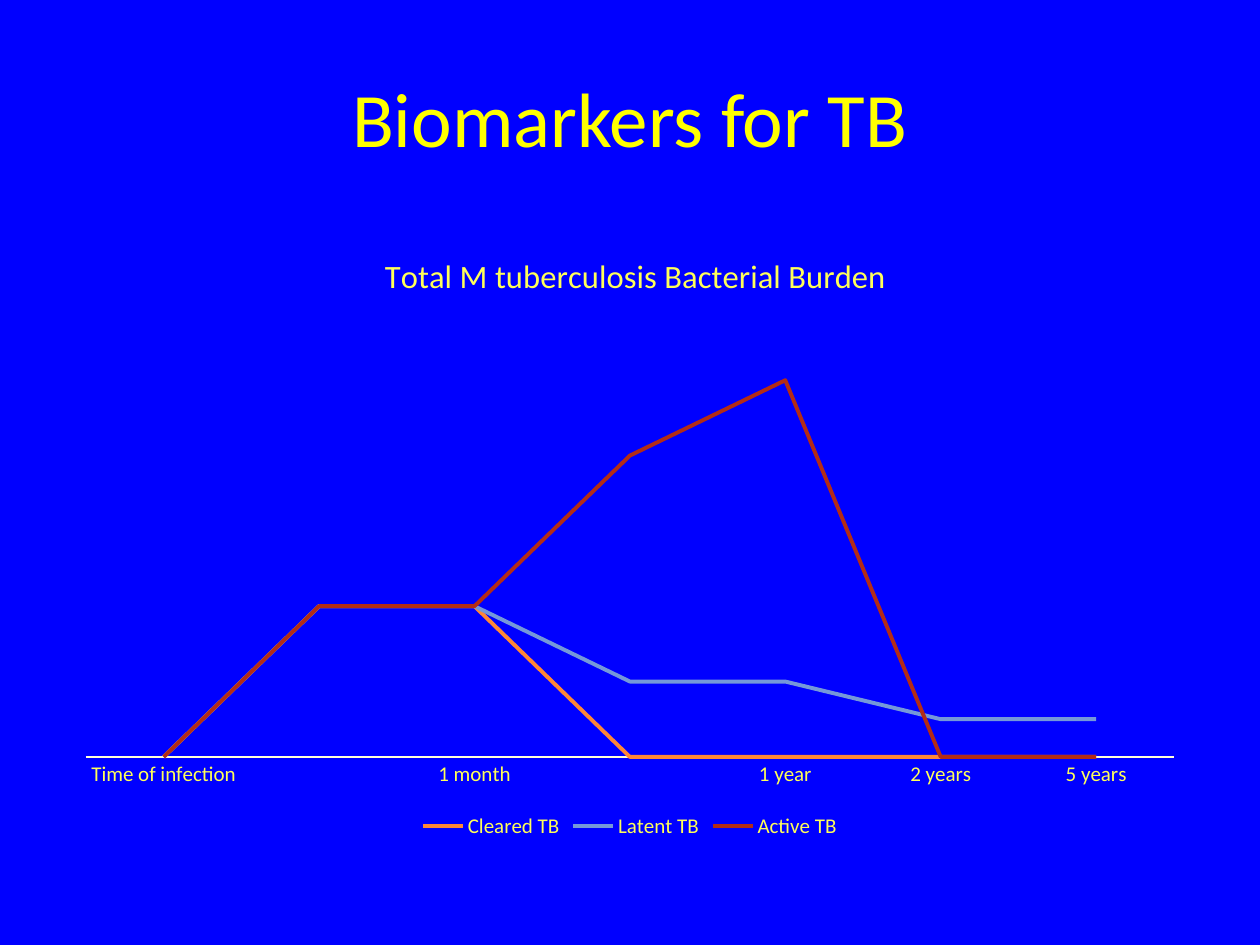
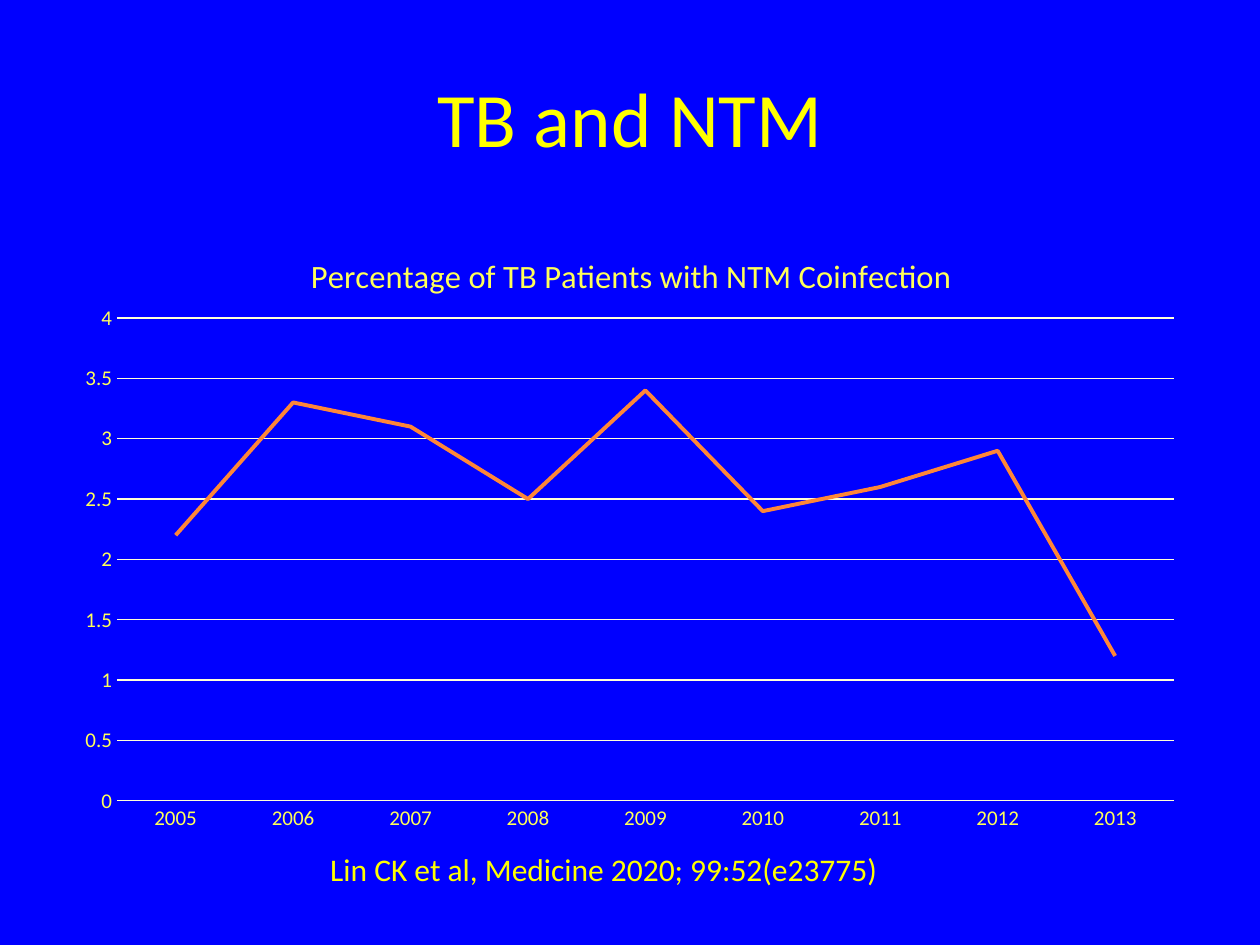
import pptx
import pptx.util
import pptx.chart.data
import pptx.dml.color
import pptx.enum.chart
import pptx.enum.text
import pptx.oxml
import pptx.oxml.ns
from dataclasses import dataclass


@dataclass(frozen=True)
class Theme:
    font: str = "Calibri"
    background: str = "0000FF"
    heading: str = "FFFF00"
    label: str = "FFFF59"
    rule: str = "FFFFD9"
    trends: tuple = ("FE8637", "7598D9", "B32C16")
    title_size: float = 44
    chart_title_size: float = 18.6
    caption_size: float = 18
    label_size: float = 12
    trend_width: float = 2.25
    rule_width: float = 0.75


theme = Theme()
EMU_PER_PX = 914400 / 126
CHART_BOX = (63, 220, 1134, 624)


def px(*lengths):
    return [pptx.util.Emu(round(length * EMU_PER_PX)) for length in lengths]


def style(font, size, color):
    font.name = theme.font
    font.size = pptx.util.Pt(size)
    font.bold = False
    font.color.rgb = pptx.dml.color.RGBColor.from_string(color)


pages = [
    {
        "title": "Biomarkers for TB",
        "chart_title": "Total M tuberculosis Bacterial Burden",
        "chart_title_at": (379, 247),
        "plot": (86, 305, 1088, 452),
        "periods": ["Time of infection", "", "1 month", "", "1 year", "2 years", "5 years"],
        "trends": {
            "Cleared TB": [0, 40, 40, 0, 0, 0, 0],
            "Latent TB": [0, 40, 40, 20, 20, 10, 10],
            "Active TB": [0, 40, 40, 80, 100, 0, 0],
        },
        "scale": (120, 20),
        "show_scale": False,
        "citation": None,
    },
    {
        "title": "TB and NTM",
        "chart_title": "Percentage of TB Patients with NTM Coinfection",
        "chart_title_at": (305, 247),
        "plot": (117, 318, 1057, 483),
        "periods": [str(year) for year in range(2005, 2014)],
        "trends": {"Series 1": [2.2, 3.3, 3.1, 2.5, 3.4, 2.4, 2.6, 2.9, 1.2]},
        "scale": (4, 0.5),
        "show_scale": True,
        "citation": "Lin CK et al, Medicine 2020; 99:52(e23775)",
    },
]

deck = pptx.Presentation()
deck.slide_width, deck.slide_height = px(1260, 945)
backdrop = deck.slide_master.background.fill
backdrop.solid()
backdrop.fore_color.rgb = pptx.dml.color.RGBColor.from_string(theme.background)

for page in pages:
    slide = deck.slides.add_slide(deck.slide_layouts[5])
    title = slide.shapes.title
    title.left, title.top, title.width, title.height = px(63, 38, 1134, 158)
    title.text_frame.text = page["title"]
    title.text_frame.vertical_anchor = pptx.enum.text.MSO_ANCHOR.MIDDLE
    heading = title.text_frame.paragraphs[0]
    heading.alignment = pptx.enum.text.PP_ALIGN.CENTER
    style(heading.runs[0].font, theme.title_size, theme.heading)

    data = pptx.chart.data.CategoryChartData()
    data.categories = page["periods"]
    for name, values in page["trends"].items():
        data.add_series(name, values)
    chart = slide.shapes.add_chart(
        pptx.enum.chart.XL_CHART_TYPE.LINE, *px(*CHART_BOX), data
    ).chart
    style(chart.font, theme.label_size, theme.label)
    chart.plots[0].vary_by_categories = False

    chart.has_title = True
    chart.chart_title.include_in_layout = False
    chart.chart_title.text_frame.text = page["chart_title"]
    chart_heading = chart.chart_title.text_frame.paragraphs[0].runs[0]
    style(chart_heading.font, theme.chart_title_size, theme.label)

    for series, color in zip(chart.series, theme.trends):
        series.smooth = False
        series.marker.style = pptx.enum.chart.XL_MARKER_STYLE.NONE
        series.format.line.width = pptx.util.Pt(theme.trend_width)
        series.format.line.color.rgb = pptx.dml.color.RGBColor.from_string(color)

    periods, amounts = chart.category_axis, chart.value_axis
    for axis in (periods, amounts):
        axis.major_tick_mark = pptx.enum.chart.XL_TICK_MARK.NONE
        axis.minor_tick_mark = pptx.enum.chart.XL_TICK_MARK.NONE
        style(axis.tick_labels.font, theme.label_size, theme.label)
    amounts.minimum_scale = 0
    amounts.maximum_scale, amounts.major_unit = page["scale"]
    amounts.visible = page["show_scale"]
    amounts.has_major_gridlines = page["show_scale"]
    amounts.format.line.fill.background()
    rules = [periods.format.line]
    if page["show_scale"]:
        rules.append(amounts.major_gridlines.format.line)
    for rule in rules:
        rule.width = pptx.util.Pt(theme.rule_width)
        rule.color.rgb = pptx.dml.color.RGBColor.from_string(theme.rule)

    chart.has_legend = len(page["trends"]) > 1
    if chart.has_legend:
        chart.legend.position = pptx.enum.chart.XL_LEGEND_POSITION.BOTTOM
        chart.legend.include_in_layout = False
        style(chart.legend.font, theme.label_size, theme.label)

    left, top, width, height = CHART_BOX
    title_part = chart.chart_title._element
    plot_part = chart._chartSpace.chart.plotArea
    for part, box in ((title_part, page["chart_title_at"]), (plot_part, page["plot"])):
        for stale in part.findall(pptx.oxml.ns.qn("c:layout")):
            part.remove(stale)
        shares = [(box[0] - left) / width, (box[1] - top) / height]
        shares += [side / whole for side, whole in zip(box[2:], (width, height))]
        target = '<c:layoutTarget val="inner"/>' if part is plot_part else ""
        modes = '<c:xMode val="edge"/><c:yMode val="edge"/>'
        sizes = "".join(f'<c:{key} val="{share:.4f}"/>' for key, share in zip("xywh", shares))
        layout = pptx.oxml.parse_xml(
            f'<c:layout {pptx.oxml.ns.nsdecls("c")}>'
            f"<c:manualLayout>{target}{modes}{sizes}</c:manualLayout></c:layout>"
        )
        part.insert(1 if part is title_part else 0, layout)

    if page["citation"]:
        citation = slide.shapes.add_textbox(*px(231, 844, 746, 50)).text_frame
        citation.word_wrap = True
        citation.auto_size = pptx.enum.text.MSO_AUTO_SIZE.SHAPE_TO_FIT_TEXT
        citation.text = page["citation"]
        source = citation.paragraphs[0]
        source.alignment = pptx.enum.text.PP_ALIGN.CENTER
        style(source.runs[0].font, theme.caption_size, theme.heading)

deck.save("out.pptx")
